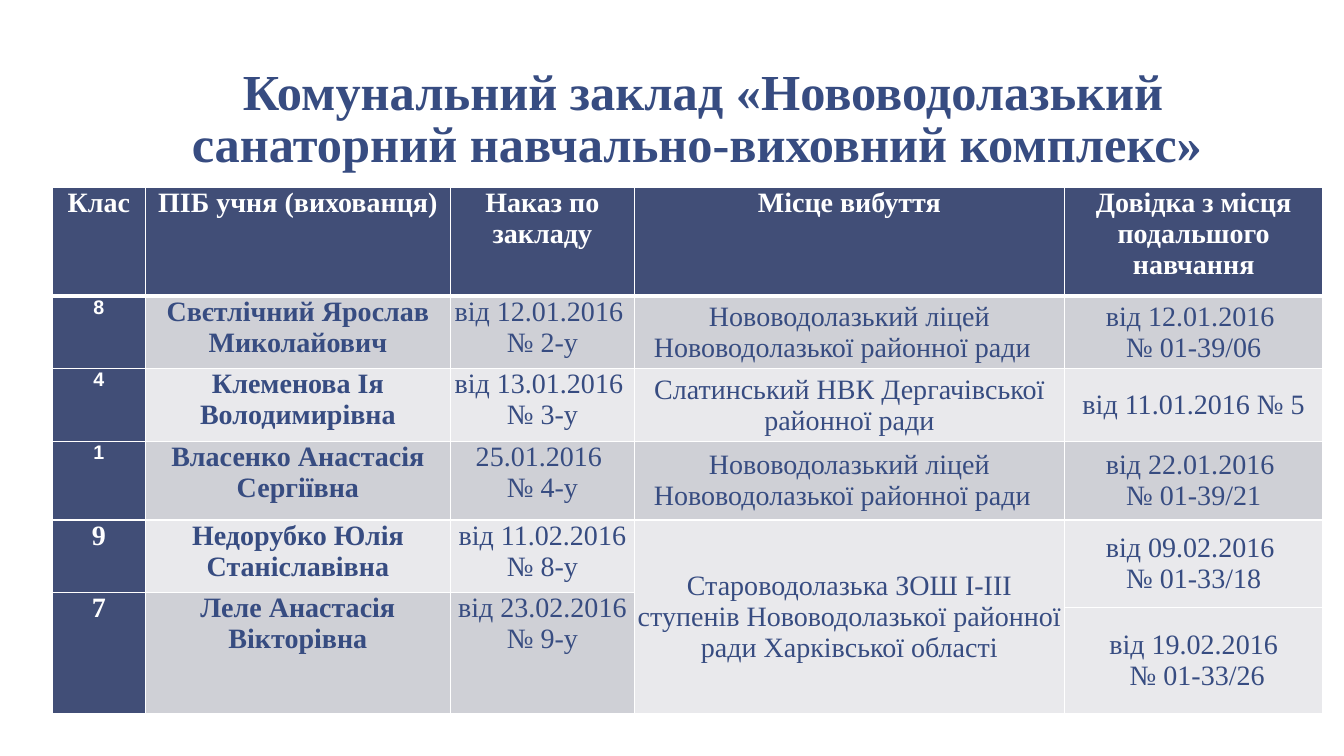
from pptx import Presentation
from pptx.dml.color import RGBColor
from pptx.enum.text import MSO_ANCHOR, PP_ALIGN
from pptx.oxml import parse_xml
from pptx.oxml.ns import nsdecls
from pptx.util import Inches, Pt

CENTER = PP_ALIGN.CENTER
TOP, MIDDLE, BOTTOM = MSO_ANCHOR.TOP, MSO_ANCHOR.MIDDLE, MSO_ANCHOR.BOTTOM
SERIF, SANS = "Times New Roman", "Arial"
WHITE, NAVY, BLUE = "FFFFFF", "414E77", "374C81"
DARK_BAND, LIGHT_BAND = "CFD0D6", "E9E9EC"


def color(value):
    return RGBColor.from_string(value)


def add_text(p, text, size, font, text_color, bold):
    p.alignment = CENTER
    r = p.add_run()
    r.text = text
    r.font.size = Pt(size)
    r.font.name = font
    r.font.bold = bold
    r.font.color.rgb = color(text_color)


prs = Presentation()
prs.slide_width = Inches(13.33)
prs.slide_height = Inches(7.5)
s = prs.slides.add_slide(prs.slide_layouts[6])
s.background.fill.solid()
s.background.fill.fore_color.rgb = color(WHITE)

title = s.shapes.add_textbox(Inches(1.22), Inches(0.36), Inches(11.51), Inches(1.42))
tf = title.text_frame
tf.word_wrap = True
tf.vertical_anchor = BOTTOM
tf.margin_left = tf.margin_right = Inches(0.13)
tf.margin_top = tf.margin_bottom = Inches(0.07)
p = tf.paragraphs[0]
p.line_spacing = 0.85
add_text(p, "Комунальний заклад «Нововодолазький санаторний навчально-виховний комплекс» ",
         36, SERIF, BLUE, True)

col_widths = [0.92, 3.03, 1.82, 4.27, 2.56]
row_heights = [1.08, 0.72, 0.72, 0.78, 0.72, 0.15, 1.05]
lyceum = "Нововодолазький ліцей Нововодолазької районної ради \u00a0"
rows = [
    ["Клас", "ПІБ учня (вихованця)", "Наказ по закладу", "Місце вибуття",
     "Довідка з місця подальшого навчання"],
    ["8", "Свєтлічний Ярослав Миколайович", "від 12.01.2016 \n№ 2-у", lyceum,
     "від 12.01.2016 \n№ 01-39/06"],
    ["4", "Клеменова Ія Володимирівна", "від 13.01.2016 \n№ 3-у",
     "Слатинський НВК Дергачівської районної ради", "від 11.01.2016 № 5"],
    ["1", "Власенко Анастасія Сергіївна", "25.01.2016 \n№ 4-у", lyceum,
     "від 22.01.2016 \n№ 01-39/21"],
    ["9", "Недорубко Юлія Станіславівна", "від 11.02.2016 № 8-у",
     "Староводолазька ЗОШ І-ІІІ ступенів Нововодолазької районної ради Харківської області",
     "від 09.02.2016 \n№ 01-33/18"],
    ["7", "Леле Анастасія Вікторівна", "від 23.02.2016 № 9-у", None, None],
    [None, None, None, None, "від 19.02.2016\n № 01-33/26"],
]
merges = [(4, 3, 6), (4, 4, 5), (5, 0, 6), (5, 1, 6), (5, 2, 6)]

frame = s.shapes.add_table(len(rows), len(col_widths), Inches(0.52), Inches(1.86),
                           Inches(sum(col_widths)), Inches(sum(row_heights)))
table = frame.table
table.first_row = False
table.horz_banding = False
for column, width in zip(table.columns, col_widths):
    column.width = Inches(width)
for row, height in zip(table.rows, row_heights):
    row.height = Inches(height)
for first, j, last in merges:
    table.cell(first, j).merge(table.cell(last, j))

for i, row in enumerate(rows):
    for j, text in enumerate(row):
        cell = table.cell(i, j)
        cell.margin_left = cell.margin_right = Inches(0.01 if i < 4 else 0.03)
        cell.margin_top = cell.margin_bottom = 0
        cell.vertical_anchor = MIDDLE if i > 0 and j > 2 else TOP

        tcPr = cell._tc.get_or_add_tcPr()
        for side in "LRTB":
            thick = (i, side) in [(0, "B"), (1, "T")]
            tcPr.append(parse_xml(
                f'<a:ln{side} {nsdecls("a")} w="{Pt(3 if thick else 1)}"><a:solidFill>'
                f'<a:srgbClr val="{WHITE}"/></a:solidFill></a:ln{side}>'))

        on_navy = i == 0 or j == 0
        band = DARK_BAND if i in (1, 3, 5) and j < 5 else LIGHT_BAND
        cell.fill.solid()
        cell.fill.fore_color.rgb = color(NAVY if on_navy else band)

        if text is None:
            continue
        small = j == 0 and 0 < i < 4
        tf = cell.text_frame
        for k, line in enumerate(text.split("\n")):
            p = tf.paragraphs[0] if k == 0 else tf.add_paragraph()
            add_text(p, line, 14 if small else 20, SANS if small else SERIF,
                     WHITE if on_navy else BLUE, i == 0 or j < 2)

prs.save("out.pptx")
